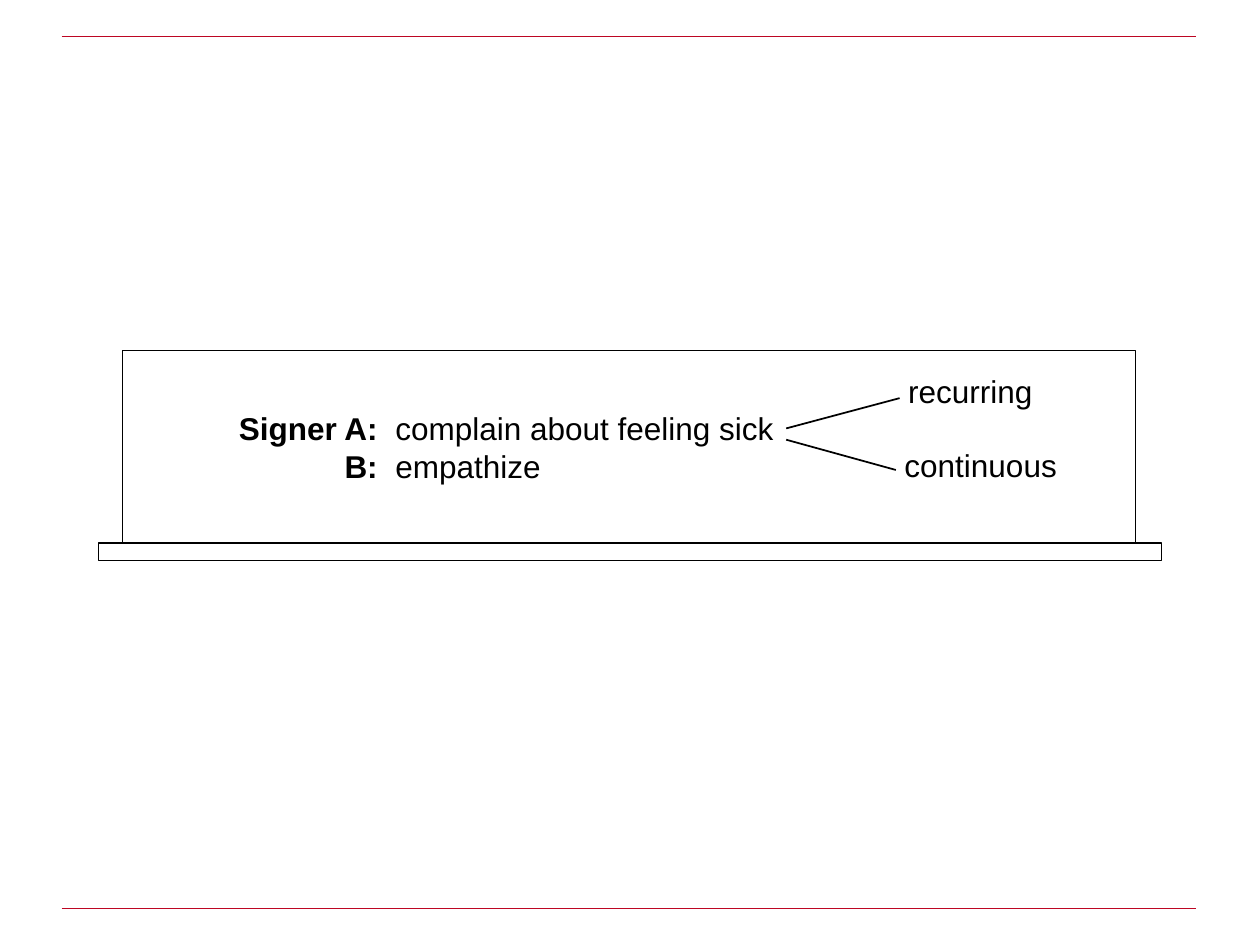
from lxml.etree import SubElement
from pptx import Presentation
from pptx.dml.color import RGBColor
from pptx.enum.shapes import MSO_CONNECTOR, MSO_SHAPE
from pptx.enum.text import MSO_ANCHOR, MSO_AUTO_SIZE, PP_ALIGN
from pptx.oxml.ns import qn
from pptx.util import Inches, Pt

COLORS = {"rule": "BD0623", "ink": "000000"}


def add_line(page, start, end, color):
    line = page.shapes.add_connector(
        MSO_CONNECTOR.STRAIGHT, *[Inches(value) for value in start + end])
    line.line.color.rgb = RGBColor.from_string(COLORS[color])
    line.line.width = Pt(1)
    SubElement(line._element.spPr, qn("a:effectLst"))


def add_span(para, text, bold=False):
    span = para.add_run()
    span.text = text
    span.font.name = "Arial"
    span.font.size = Pt(18)
    span.font.bold = bold
    span.font.color.rgb = RGBColor.from_string(COLORS["ink"])


deck = Presentation()
deck.slide_width, deck.slide_height = Inches(10), Inches(7.5)
page = deck.slides.add_slide(deck.slide_layouts[6])

# Red rules at top and bottom
for y in (0.29, 7.21):
    add_line(page, (0.49, y), (9.49, y), "rule")

# Whiteboard and its tray
panels = []
for bounds in ((0.97, 2.78, 8.04, 1.53), (0.78, 4.31, 8.44, 0.14)):
    panel = page.shapes.add_shape(
        MSO_SHAPE.RECTANGLE, *[Inches(value) for value in bounds])
    panel.shadow.inherit = False
    panel.fill.background()
    panel.line.color.rgb = RGBColor.from_string(COLORS["ink"])
    panel.line.width = Pt(0.75)
    panels.append(panel)
board = panels[0]

# Dialogue, aligned on a right and a left tab stop
frame = board.text_frame
frame.word_wrap = True
frame.vertical_anchor = MSO_ANCHOR.MIDDLE
dialogue = [("Signer A:", "complain about feeling sick"), ("B:", "empathize")]
for index, (speaker, action) in enumerate(dialogue):
    para = frame.add_paragraph() if index else frame.paragraphs[0]
    para.alignment = PP_ALIGN.LEFT
    tabs = SubElement(para._p.get_or_add_pPr(), qn("a:tabLst"))
    for position, side in ((1.93, "r"), (2.07, "l")):
        SubElement(tabs, qn("a:tab"), pos=str(Inches(position)), algn=side)
    add_span(para, f"\t{speaker}\t", bold=True)
    add_span(para, action)

# Two kinds of sickness, each with its branch line
branches = [
    ("recurring", (7.11, 2.9, 1.2, 0.4), (6.24, 3.4), (7.14, 3.16)),
    ("continuous", (7.08, 3.49, 1.42, 0.4), (6.24, 3.49), (7.11, 3.73)),
]
for label, bounds, start, end in branches:
    box = page.shapes.add_textbox(*[Inches(value) for value in bounds])
    box.text_frame.word_wrap = False
    box.text_frame.auto_size = MSO_AUTO_SIZE.SHAPE_TO_FIT_TEXT
    add_span(box.text_frame.paragraphs[0], label)
    add_line(page, start, end, "ink")

deck.save("out.pptx")
